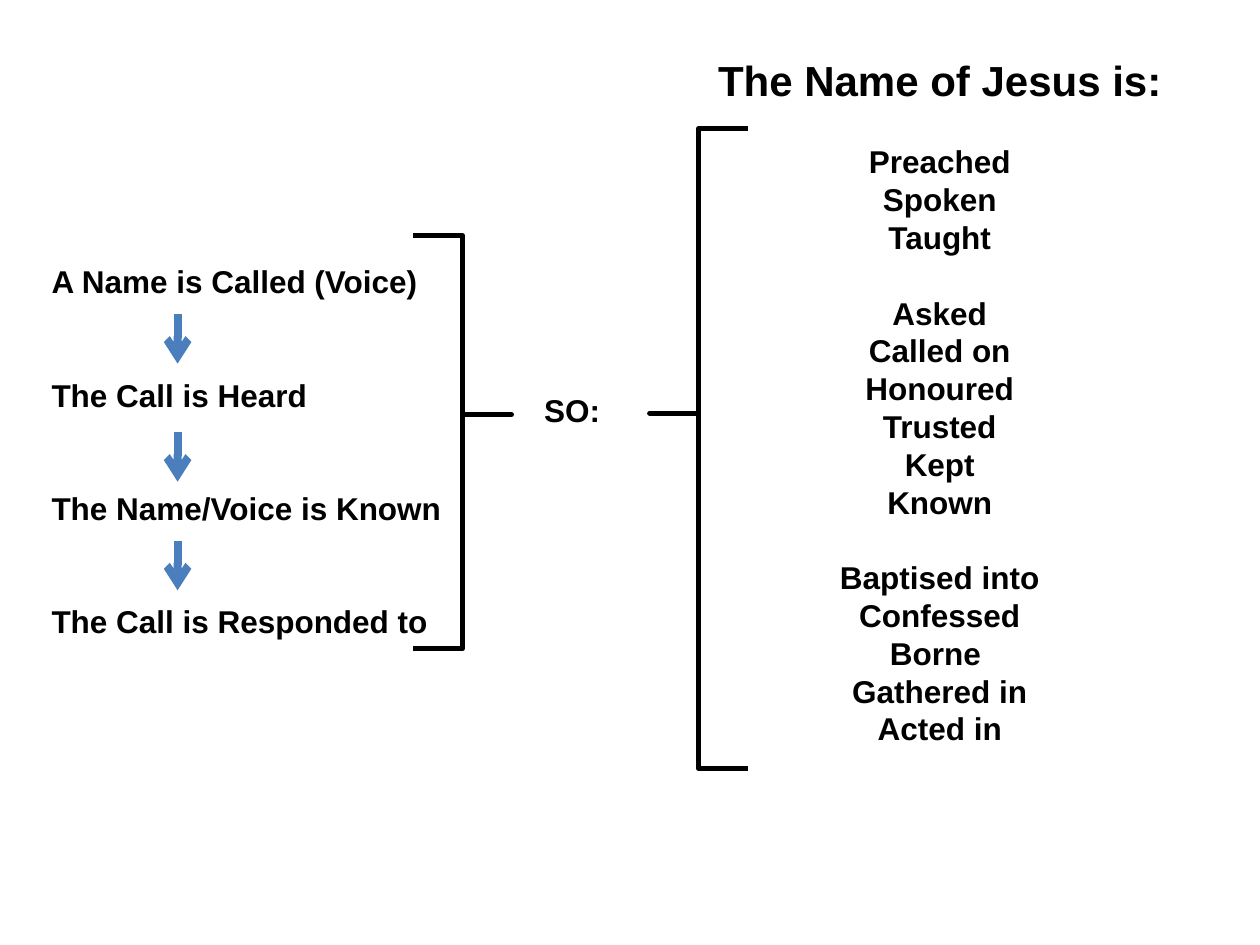
from collections import namedtuple
from dataclasses import dataclass
from lxml.etree import SubElement
from pptx import Presentation
from pptx.dml.color import RGBColor
from pptx.enum.shapes import MSO_CONNECTOR, MSO_SHAPE
from pptx.enum.text import MSO_AUTO_SIZE, PP_ALIGN
from pptx.oxml.ns import qn
from pptx.util import Cm, Pt

Box = namedtuple("Box", "left top width height")


@dataclass(frozen=True)
class Theme:
    font: str = "Arial"
    ink: RGBColor = RGBColor(0, 0, 0)
    blue: RGBColor = RGBColor(0x4B, 0x7E, 0xBC)
    head: float = 24
    body: float = 18
    row: float = 21.6
    brace: float = 3
    arrow: float = 4.5


THEME = Theme()

STEPS = ["A Name is Called (Voice)", "The Call is Heard",
         "The Name/Voice is Known", "The Call is Responded to"]
TITLE = "The Name of Jesus is:"
GROUPS = [
    ["Preached", "Spoken", "Taught"],
    ["Asked", "Called on", "Honoured", "Trusted", "Kept", "Known"],
    ["Baptised into", "Confessed", "Borne ", "Gathered in", "Acted in"],
]


def add_text(slide, box, lines, align=PP_ALIGN.LEFT):
    shape = slide.shapes.add_textbox(*map(Cm, box))
    frame = shape.text_frame
    frame.word_wrap = True
    frame.auto_size = MSO_AUTO_SIZE.SHAPE_TO_FIT_TEXT
    for i, (text, size, rows) in enumerate(lines):
        para = frame.add_paragraph() if i else frame.paragraphs[0]
        para.alignment = align
        para.space_before = Pt(rows * THEME.row)
        run = para.add_run()
        run.text = text
        font = run.font
        font.name, font.size, font.bold = THEME.font, Pt(size), True
        font.color.rgb = THEME.ink


def add_arrow(slide, x, top, size):
    line = slide.shapes.add_connector(
        MSO_CONNECTOR.STRAIGHT, Cm(x), Cm(top), Cm(x), Cm(top + size))
    line.line.color.rgb = THEME.blue
    line.line.width = Pt(THEME.arrow)
    SubElement(line.line._get_or_add_ln(), qn("a:tailEnd"), type="arrow")
    SubElement(line._element.spPr, qn("a:effectLst"))


def add_brace(slide, box, point, flip=False):
    brace = slide.shapes.add_shape(MSO_SHAPE.RIGHT_BRACE, *map(Cm, box))
    brace.shadow.inherit = False
    brace.fill.background()
    brace.line.color.rgb = THEME.ink
    brace.line.width = Pt(THEME.brace)
    brace.adjustments[0] = 0
    brace.adjustments[1] = point
    if flip:
        brace._element.spPr.xfrm.set("flipH", "1")


def add_names(slide, box):
    lines = [(TITLE, THEME.head, 0)]
    for group in GROUPS:
        lines += [(name, THEME.body, int(i == 0))
                  for i, name in enumerate(group)]
    add_text(slide, box, lines, PP_ALIGN.CENTER)
    add_brace(slide, Box(box.left - 0.79, box.top + 1.62, 1.98, 12.9),
              0.445, flip=True)


def add_steps(slide, box):
    add_text(slide, box, [(step, THEME.body, 2 if i else 0)
                          for i, step in enumerate(STEPS)])
    for drop in (1.17, 3.55, 5.74):
        add_arrow(slide, box.left + 2.79, box.top + drop, 1)
    add_brace(slide, Box(box.left + 7.54, box.top - 0.41, 1.98, 8.33), 0.433)


def add_link(slide, box):
    add_text(slide, box, [("SO:", THEME.body, 0)])


def main():
    deck = Presentation()
    deck.slide_width, deck.slide_height = Cm(25.4), Cm(19.05)
    slide = deck.slides.add_slide(deck.slide_layouts[6])
    add_names(slide, Box(13.89, 0.97, 10.11, 14.53))
    add_steps(slide, Box(0.79, 5.16, 8.74, 7.95))
    add_link(slide, Box(10.72, 7.75, 1.98, 1.02))
    deck.save("out.pptx")


if __name__ == "__main__":
    main()
